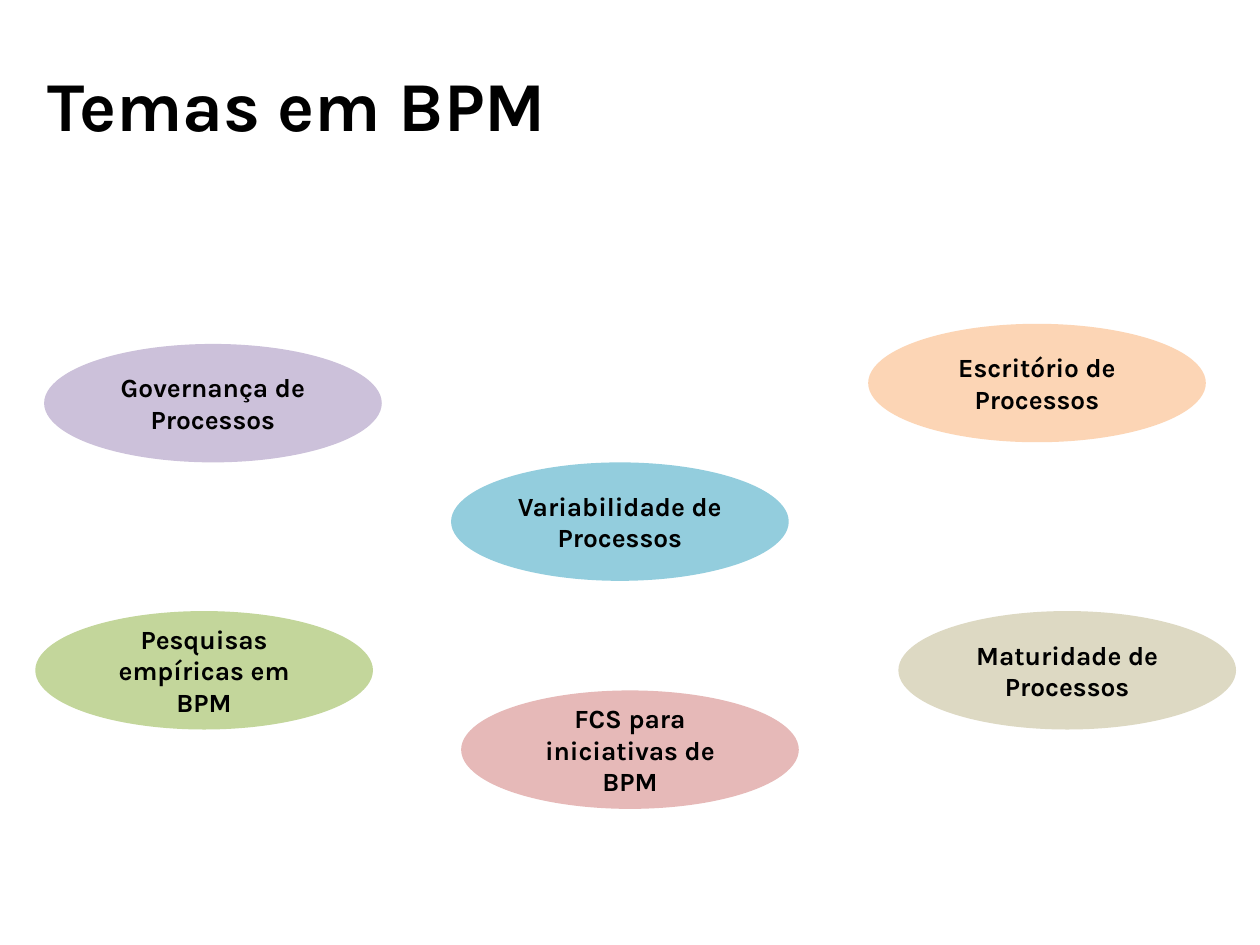
from pptx import Presentation
from pptx.dml.color import RGBColor as RGB
from pptx.enum.shapes import MSO_SHAPE as Shape
from pptx.enum.text import MSO_ANCHOR as Anchor, PP_ALIGN as Align
from pptx.util import Inches, Pt

# Content: text, left, top, colour
TITLE = "Temas em BPM"
THEMES = [
    ("Governança de Processos", 0.35, 2.73, "purple"),
    ("Variabilidade de Processos", 3.58, 3.67, "blue"),
    ("Escritório de Processos", 6.89, 2.57, "orange"),
    ("FCS para iniciativas de BPM", 3.66, 5.48, "pink"),
    ("Maturidade de Processos", 7.13, 4.85, "sand"),
    ("Pesquisas empíricas em BPM", 0.28, 4.85, "green"),
]
COLORS = {
    "text": "000000", "purple": "CCC1DA", "blue": "93CDDD",
    "orange": "FCD5B5", "pink": "E6B9B8", "sand": "DDD9C3",
    "green": "C3D69B",
}
FONT = {"name": "Karla", "bold": True}
WIDTH, HEIGHT = 2.68, 0.94


def write(shape, text, size, align):
    frame = shape.text_frame
    frame.word_wrap = True
    frame.vertical_anchor = Anchor.MIDDLE
    par = frame.paragraphs[0]
    par.alignment = align
    run = par.add_run()
    run.text = text
    for key, value in {**FONT, "size": Pt(size)}.items():
        setattr(run.font, key, value)
    run.font.color.rgb = RGB.from_string(COLORS["text"])


prs = Presentation()
prs.slide_width, prs.slide_height = Inches(10), Inches(7.5)
slide = prs.slides.add_slide(prs.slide_layouts[6])

# Title
box = slide.shapes.add_textbox(*map(Inches, (0.28, 0.02, 9.72, 1.61)))
write(box, TITLE, 40, Align.LEFT)

# Theme ellipses
for text, left, top, color in THEMES:
    area = map(Inches, (left, top, WIDTH, HEIGHT))
    oval = slide.shapes.add_shape(Shape.OVAL, *area)
    oval.shadow.inherit = False
    oval.fill.solid()
    oval.fill.fore_color.rgb = RGB.from_string(COLORS[color])
    oval.line.fill.background()
    write(oval, text, 15, Align.CENTER)

prs.save("out.pptx")
